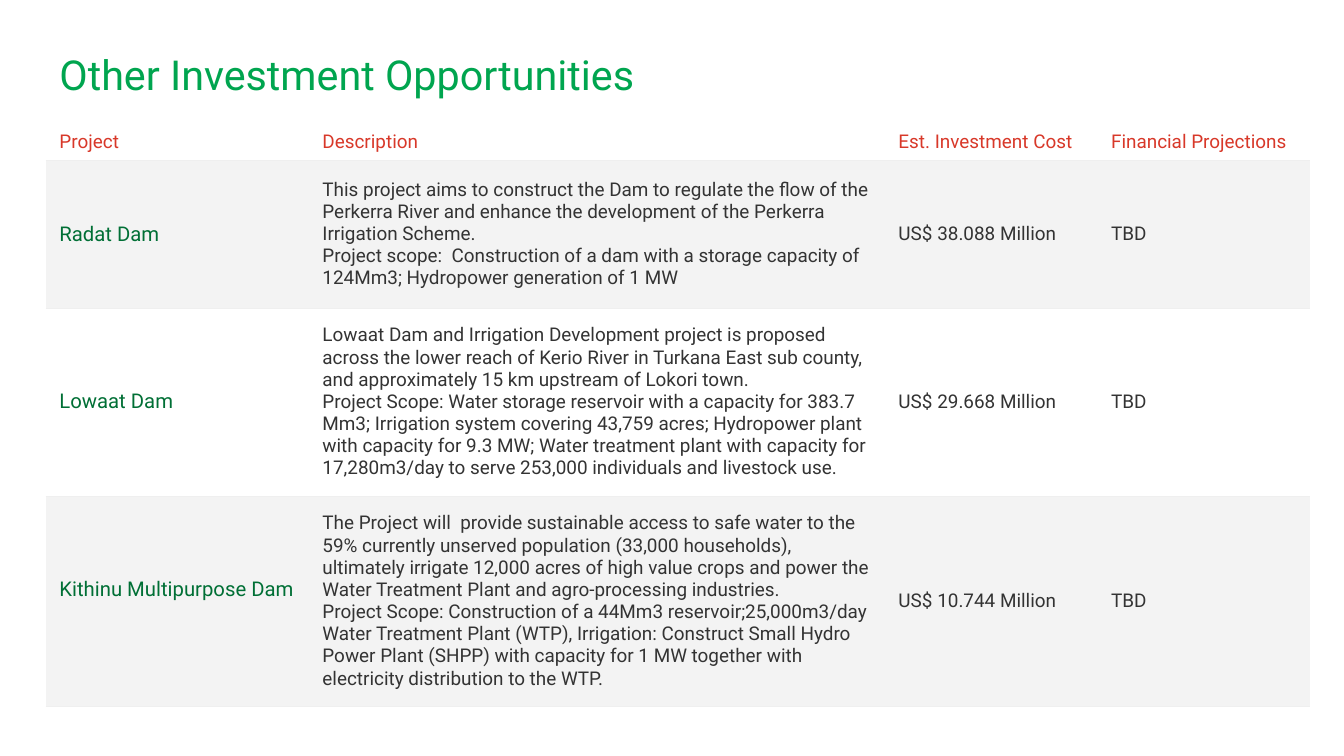
import pptx
import pptx.util
import pptx.dml.color
import pptx.enum.text
import pptx.oxml

HEADS = ["Project", "Description", "Est. Investment Cost", "Financial Projections"]
DAMS = [
    ["Radat Dam",
     "This project aims to construct the Dam to regulate the flow of the Perkerra River "
     "and enhance the development of the Perkerra Irrigation Scheme.\n"
     "Project scope:  Construction of a dam with a storage capacity of 124Mm3; "
     "Hydropower generation of 1 MW",
     "US$ 38.088 Million", "TBD"],
    ["Lowaat Dam",
     "Lowaat Dam and Irrigation Development project is proposed across the lower reach of "
     "Kerio River in Turkana East sub county, and approximately 15 km upstream of Lokori town.\n"
     "Project Scope: Water storage reservoir with a capacity for 383.7 Mm3; Irrigation system "
     "covering 43,759 acres; Hydropower plant with capacity for 9.3 MW; Water treatment plant "
     "with capacity for 17,280m3/day to serve 253,000 individuals and livestock use.",
     "US$ 29.668 Million", "TBD"],
    ["Kithinu Multipurpose Dam",
     "The Project will  provide sustainable access to safe water to the 59% currently unserved "
     "population (33,000 households), ultimately irrigate 12,000 acres of high value crops and "
     "power the Water Treatment Plant and agro-processing industries.\n"
     "Project Scope: Construction of a 44Mm3 reservoir;25,000m3/day Water Treatment Plant (WTP), "
     "Irrigation: Construct Small Hydro Power Plant (SHPP) with capacity for 1 MW together with "
     "electricity distribution to the WTP.",
     "US$ 10.744 Million", "TBD"],
]
LEFT = 3.41
COLS = [19.57, 42.86, 15.82, 15.79]
ROWS = [4.73, 19.53, 24.87, 27.8]
MIDDLE = pptx.enum.text.MSO_ANCHOR.MIDDLE
TOP = pptx.enum.text.MSO_ANCHOR.TOP


def color(code):
    return pptx.dml.color.RGBColor.from_string(code)


class Deck:
    font = "Roboto"
    green, leaf, red, ink = "00A54F", "006F35", "D83829", "333333"
    white, band, rule = "FFFFFF", "F3F3F3", "EFEFEF"
    side, edge = pptx.util.Inches(0.27), pptx.util.Inches(0.13)

    def __init__(self, width, height):
        self.show = pptx.Presentation()
        self.show.slide_width = pptx.util.Inches(width)
        self.show.slide_height = pptx.util.Inches(height)
        self.slide = self.show.slides.add_slide(self.show.slide_layouts[6])

    def across(self, share):
        return round(self.show.slide_width * share / 100)

    def down(self, share):
        return round(self.show.slide_height * share / 100)

    def label(self, frame, text, size, code):
        frame.word_wrap = True
        frame.text = text
        for line in frame.paragraphs:
            line.font.name = self.font
            line.font.size = pptx.util.Pt(size)
            line.font.color.rgb = color(code)

    def title(self, text, left, top, width, height):
        box = self.slide.shapes.add_textbox(
            self.across(left), self.down(top), self.across(width), self.down(height))
        frame = box.text_frame
        frame.margin_left = frame.margin_right = self.side
        frame.margin_top = frame.margin_bottom = self.side
        frame.vertical_anchor = MIDDLE
        self.label(frame, text, 59, self.green)

    def border(self, cell, head):
        space = "http://schemas.openxmlformats.org/drawingml/2006/main"
        solid = f'<a:solidFill><a:srgbClr val="{self.rule}"/></a:solidFill>'
        props = cell._tc.get_or_add_tcPr()
        for place, tag in enumerate(["lnL", "lnR", "lnT", "lnB"]):
            drawn = tag == "lnB" or (tag == "lnT" and not head)
            paint = solid if drawn else "<a:noFill/>"
            props.insert(place, pptx.oxml.parse_xml(
                f'<a:{tag} xmlns:a="{space}" w="9525">{paint}</a:{tag}>'))

    def cell(self, cell, text, row, col):
        head = row == 0
        cell.margin_left = cell.margin_right = self.side
        cell.margin_top = cell.margin_bottom = self.edge
        cell.vertical_anchor = TOP if head else MIDDLE
        cell.fill.solid()
        cell.fill.fore_color.rgb = color(self.band if row % 2 else self.white)
        name = col == 0 and not head
        code = self.red if head else self.leaf if name else self.ink
        self.label(cell.text_frame, text, 29 if name else 27, code)
        self.border(cell, head)

    def table(self, data, left, top, cols, rows):
        grid = self.slide.shapes.add_table(
            len(rows), len(cols), self.across(left), self.down(top),
            self.across(sum(cols)), self.down(sum(rows))).table
        grid.first_row = grid.horz_banding = False
        for col, share in zip(grid.columns, cols):
            col.width = self.across(share)
        for row, share in zip(grid.rows, rows):
            row.height = self.down(share)
        for row, texts in enumerate(data):
            for col, text in enumerate(texts):
                self.cell(grid.cell(row, col), text, row, col)
        return grid


def main():
    deck = Deck(26.67, 15)
    deck.title("Other Investment Opportunities", LEFT, 4.2, 93.18, 11.13)
    grid = deck.table([HEADS] + DAMS, LEFT, 16.47, COLS, ROWS)
    grid.cell(3, 0).margin_bottom = pptx.util.Inches(0.57)
    deck.show.save("out.pptx")


if __name__ == "__main__":
    main()
